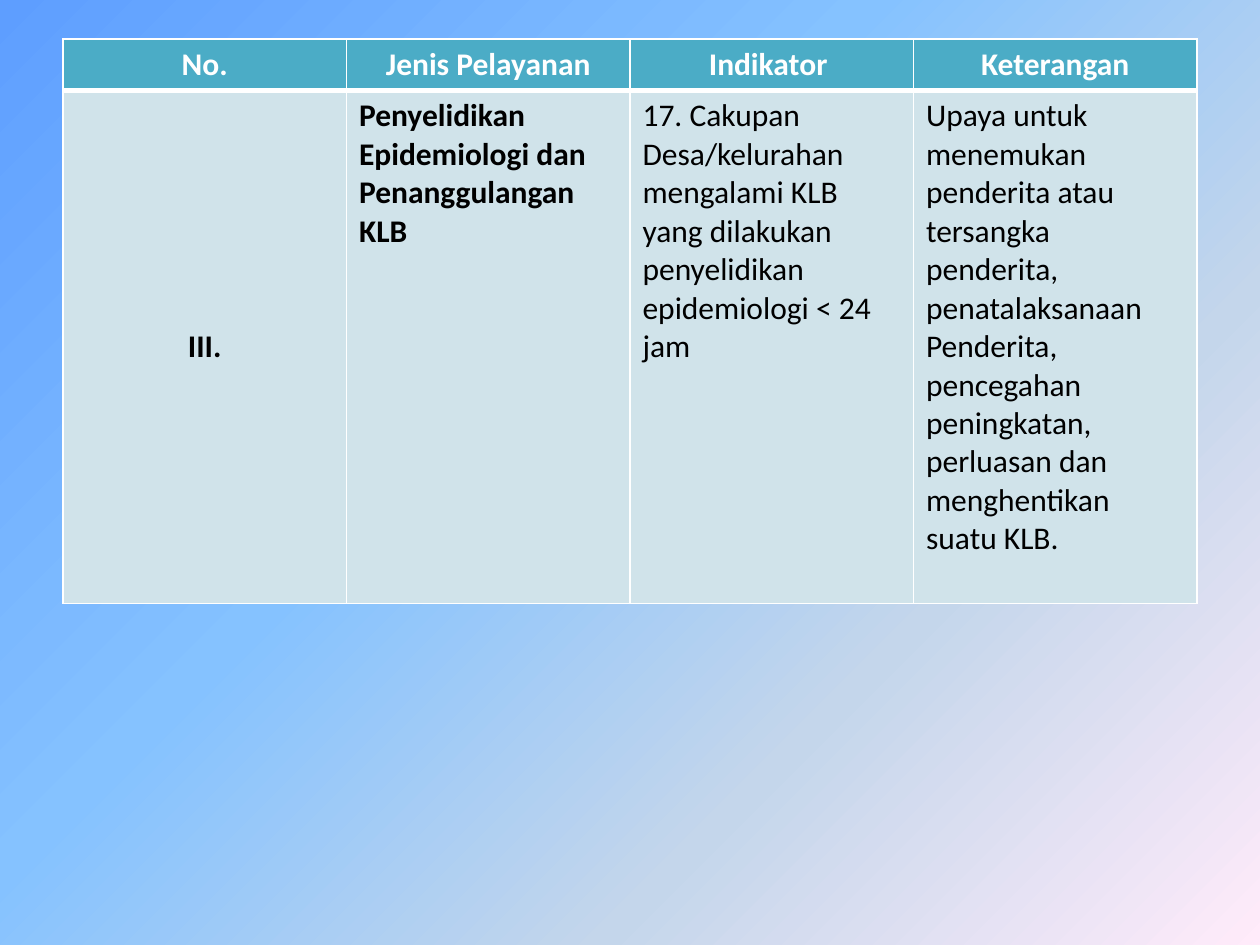
from copy import deepcopy

from lxml.etree import SubElement
from pptx import Presentation
from pptx.dml.color import RGBColor as RGB
from pptx.enum.text import MSO_ANCHOR as Anchor, PP_ALIGN as Align
from pptx.oxml.ns import qn
from pptx.util import Inches, Pt

HEADER = ["No.", "Jenis Pelayanan", "Indikator ", "Keterangan"]
BODY = [
    "III.",
    "Penyelidikan Epidemiologi dan Penanggulangan KLB",
    "17. Cakupan Desa/kelurahan mengalami KLB yang dilakukan "
    "penyelidikan epidemiologi < 24 jam",
    "Upaya untuk menemukan penderita atau tersangka penderita, "
    "penatalaksanaan Penderita, pencegahan peningkatan, perluasan dan "
    "menghentikan suatu KLB.",
]
BOLD_BODY_COLS = 2

THEME = {
    "font": "Calibri", "size": 18,
    "header_fill": "4BACC6", "header_text": "FFFFFF",
    "body_fill": "D0E3EA", "body_text": "000000",
    "border": "FFFFFF", "thin": 1, "thick": 3,
    "background": [(0, "5E9EFF"), (0.4, "85C2FF"), (0.7, "C4D6EB"), (1, "FFEBFA")],
}
SLIDE_W, SLIDE_H = 10, 7.5
MARGIN, TOP = 0.05 * SLIDE_W, 0.31
ROW_HEIGHTS = [0.41, 4.07]


def paint_background(s):
    fill = s.background.fill
    fill.gradient()
    fill.gradient_angle = 315
    stops = s.element.find(".//" + qn("a:gsLst"))
    while len(stops) < len(THEME["background"]):
        stops.append(deepcopy(stops[0]))
    for stop, (position, color) in zip(fill.gradient_stops, THEME["background"]):
        stop.position = position
        stop.color.rgb = RGB.from_string(color)


def set_borders(cell, widths):
    """Draw the borders; widths maps the sides L, R, T, B to points."""
    tc_pr = cell._tc.get_or_add_tcPr()
    for side in "LRTB":
        line = SubElement(tc_pr, qn(f"a:ln{side}"), w=str(Pt(widths[side])))
        solid = SubElement(line, qn("a:solidFill"))
        SubElement(solid, qn("a:srgbClr"), val=THEME["border"])


def fill_cell(cell, text, part, bold, centered, thick_side):
    widths = dict.fromkeys("LRTB", THEME["thin"])
    widths[thick_side] = THEME["thick"]
    set_borders(cell, widths)
    cell.fill.solid()
    cell.fill.fore_color.rgb = RGB.from_string(THEME[part + "_fill"])
    cell.text = text
    p = cell.text_frame.paragraphs[0]
    p.alignment = Align.CENTER if centered else Align.LEFT
    p.font.name, p.font.size, p.font.bold = THEME["font"], Pt(THEME["size"]), bold
    p.font.color.rgb = RGB.from_string(THEME[part + "_text"])


def add_service_table(s):
    width = SLIDE_W - 2 * MARGIN
    table = s.shapes.add_table(
        len(ROW_HEIGHTS), len(HEADER), Inches(MARGIN), Inches(TOP),
        Inches(width), Inches(sum(ROW_HEIGHTS))).table
    for row, height in zip(table.rows, ROW_HEIGHTS):
        row.height = Inches(height)
    for col, (heading, text) in enumerate(zip(HEADER, BODY)):
        fill_cell(table.cell(0, col), heading, "header", True, True, "B")
        fill_cell(table.cell(1, col), text, "body", col < BOLD_BODY_COLS, col == 0, "T")
    table.cell(1, 0).vertical_anchor = Anchor.MIDDLE


def main():
    prs = Presentation()
    prs.slide_width, prs.slide_height = Inches(SLIDE_W), Inches(SLIDE_H)
    s = prs.slides.add_slide(prs.slide_layouts[6])
    paint_background(s)
    add_service_table(s)
    prs.save("out.pptx")


if __name__ == "__main__":
    main()
